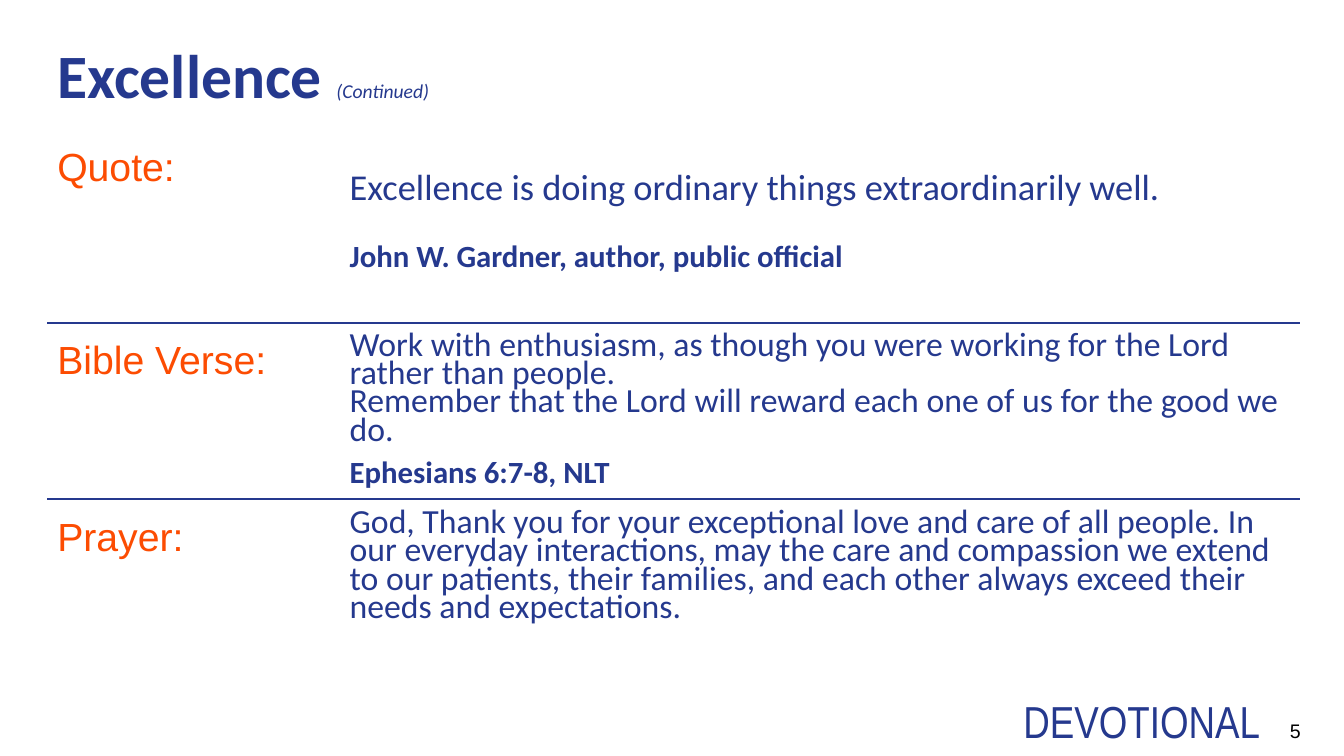
"""Build the Excellence devotional slide with its quote, verse and prayer."""
import pptx
import pptx.util
import pptx.dml.color
import pptx.enum.text
import pptx.enum.shapes
import pptx.oxml

Inches = pptx.util.Inches
ALIGN = pptx.enum.text.PP_ALIGN
ANCHOR = pptx.enum.text.MSO_ANCHOR

THEME = {
    "head": {"name": "Calibri", "size": 44, "color": "25398E", "bold": True},
    "note": {"name": "Calibri", "size": 14, "color": "25398E", "italic": True},
    "label": {"name": "Arial", "size": 28, "color": "FC4C02"},
    "quote": {"name": "Calibri", "size": 26, "color": "25398E"},
    "body": {"name": "Calibri", "size": 24.1, "color": "25398E"},
    "credit": {"name": "Calibri", "size": 22, "color": "25398E", "bold": True},
    "brand": {"name": "Arial Narrow", "size": 32, "color": "25398E"},
    "page": {"name": "Arial", "size": 14, "color": "000000"},
    "rule": {"color": "25398E", "width": 1.5},
}

LEFT, RIGHT, TEXT = 0.47, 12.89, 3.37
LABELS = [("Quote:", 1.42, 1.16), ("Bible Verse:", 3.33, 1.25), ("Prayer:", 5.09, 1.03)]
RULES = [3.2, 4.95]
TEXTS = [
    ("Excellence is doing ordinary things extraordinarily well.", "quote", 1.63, 9.49, 1.31, 0.9),
    ("Work with enthusiasm, as though you were working for the Lord rather than people.\v"
     "Remember that the Lord will reward each one of us for the good we do.",
     "body", 3.26, 9.49, 1.38, 0.7),
    ("God, Thank you for your exceptional love and care of all people. In our everyday "
     "interactions, may the care and compassion we extend to our patients, their families, "
     "and each other always exceed their needs and expectations.",
     "body", 5.02, 9.49, 1.37, 0.7),
    ("John W. Gardner, author, public official", "credit", 2.34, 6.24, 0.67, 0.9),
    ("Ephesians 6:7-8, NLT", "credit", 4.48, 8.15, 0.52, 0.9),
]


def rgb(code):
    return pptx.dml.color.RGBColor.from_string(code)


def add_text(slide, spot, runs, space=1.0, align=ALIGN.LEFT, anchor=ANCHOR.TOP):
    frame = slide.shapes.add_textbox(*map(Inches, spot)).text_frame
    frame.word_wrap = True
    frame.vertical_anchor = anchor
    para = frame.paragraphs[0]
    para.line_spacing = space
    para.alignment = align
    for words, style in runs:
        for at, part in enumerate(words.split("\v")):
            if at:
                para.add_line_break()
            run = para.add_run()
            run.text = part
            for key, value in THEME[style].items():
                if key == "color":
                    run.font.color.rgb = rgb(value)
                else:
                    setattr(run.font, key, pptx.util.Pt(value) if key == "size" else value)


def add_rule(slide, top):
    ends = map(Inches, (LEFT, top, RIGHT, top))
    rule = slide.shapes.add_connector(pptx.enum.shapes.MSO_CONNECTOR.STRAIGHT, *ends)
    rule.line.color.rgb = rgb(THEME["rule"]["color"])
    rule.line.width = pptx.util.Pt(THEME["rule"]["width"])
    rule._element.spPr.append(pptx.oxml.parse_xml(
        '<a:effectLst xmlns:a="http://schemas.openxmlformats.org/drawingml/2006/main"/>'))


def main():
    deck = pptx.Presentation()
    deck.slide_width, deck.slide_height = Inches(13.33), Inches(7.5)
    slide = deck.slides.add_slide(deck.slide_layouts[6])
    add_text(slide, (LEFT, 0.4, RIGHT - LEFT, 0.9),
             [("Excellence ", "head"), ("(Continued)", "note")], 0.9)
    for words, top, height in LABELS:
        add_text(slide, (LEFT, top, 2.67, height), [(words, "label")], 0.9)
    for top in RULES:
        add_rule(slide, top)
    for words, style, top, width, height, space in TEXTS:
        add_text(slide, (TEXT, top, width, height), [(words, style)], space)
    add_text(slide, (2.24, 6.83, 10.36, 0.48), [("DEVOTIONAL", "brand")], align=ALIGN.RIGHT)
    add_text(slide, (11.58, 7.07, 1.42, 0.36), [("5", "page")],
             align=ALIGN.RIGHT, anchor=ANCHOR.MIDDLE)
    deck.save("out.pptx")


if __name__ == "__main__":
    main()
